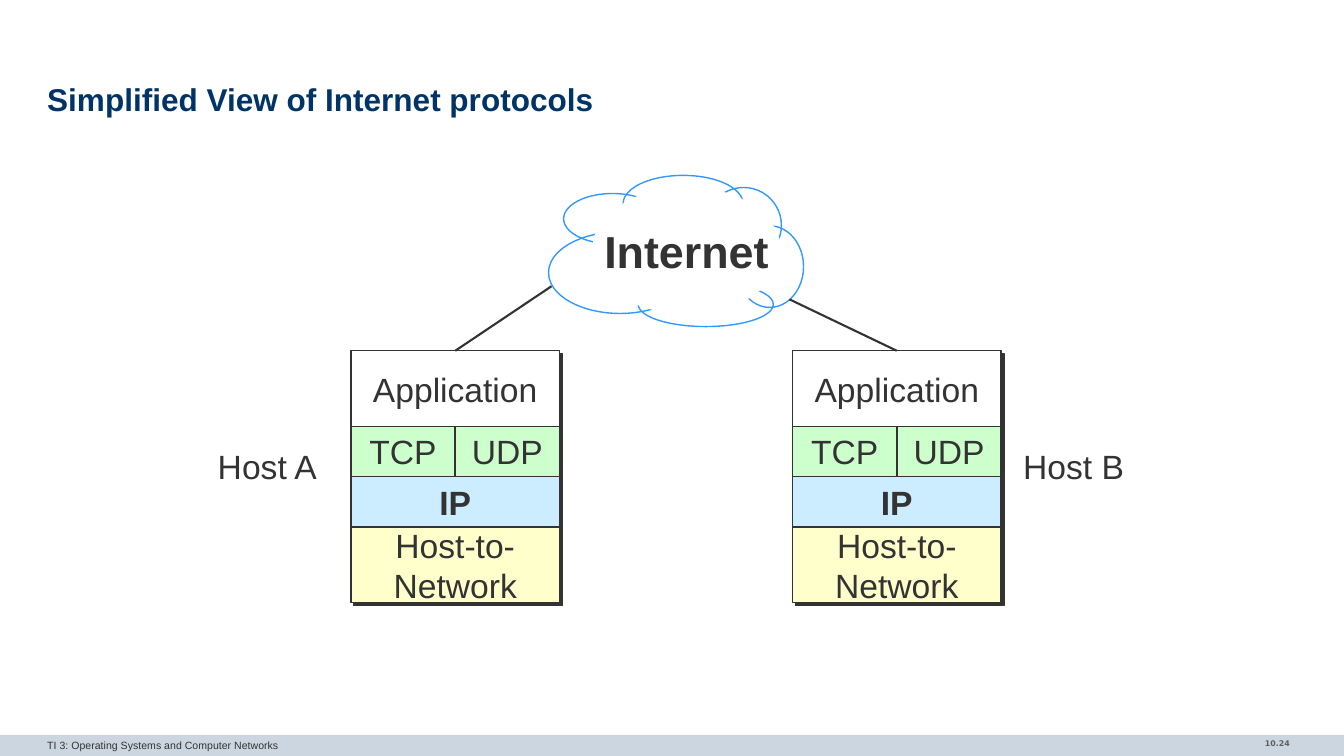
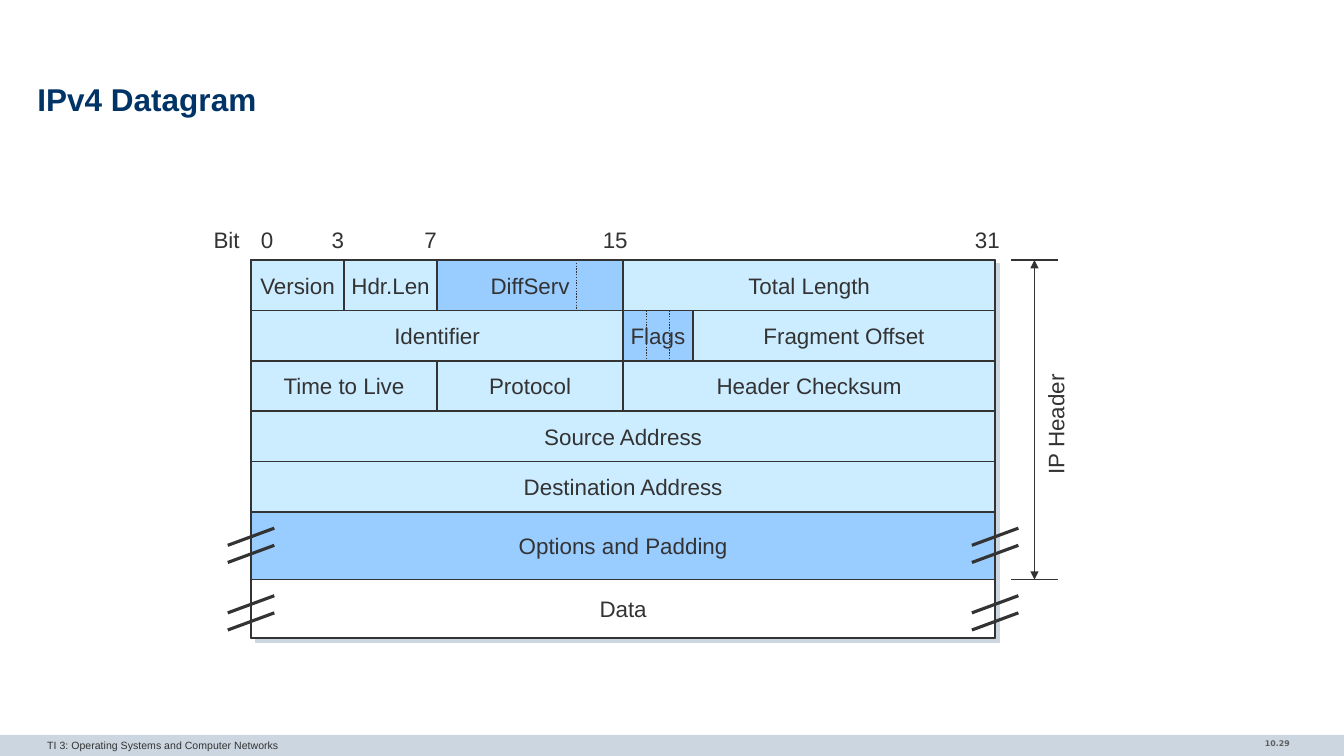
from dataclasses import dataclass
from typing import Optional

from lxml import etree
from pptx import Presentation
from pptx import util as u
from pptx.dml.color import RGBColor
from pptx.enum import dml, shapes, text
from pptx.oxml.ns import qn

COLORS = {
    "ink": "333333", "title": "003366", "band": "CCD6E0", "number": "5F5F5F",
    "white": "FFFFFF", "green": "CCFFCC", "pale": "CCECFF", "blue": "99CCFF",
    "yellow": "FFFFCC", "cloud": "3399FF",
}
LEFT, CENTER, RIGHT = text.PP_ALIGN.LEFT, text.PP_ALIGN.CENTER, text.PP_ALIGN.RIGHT
RECT, OVAL = shapes.MSO_SHAPE.RECTANGLE, shapes.MSO_SHAPE.OVAL
COURSE = "TI 3: Operating Systems and Computer Networks"


@dataclass(frozen=True)
class Box:
    left: float
    top: float
    width: float
    height: float

    def lengths(self) -> list:
        return [u.Inches(v) for v in (self.left, self.top, self.width, self.height)]


@dataclass(frozen=True)
class Style:
    size: float
    color: str = "ink"
    bold: bool = False
    font: str = "Arial"
    align: text.PP_ALIGN = LEFT


@dataclass(frozen=True)
class Layer:
    """One part of a host's protocol stack; left and width are shares of the stack."""
    name: str
    top: float
    height: float
    fill: str
    left: float = 0
    width: float = 1
    bold: bool = False


@dataclass(frozen=True)
class Field:
    name: str
    bits: int
    fill: Optional[str] = "pale"
    dividers: tuple = ()  # dotted lines, in bits from the field's left edge


@dataclass(frozen=True)
class Row:
    height: float
    fields: tuple
    broken: bool = False


LAYERS = (
    Layer("Application", 0, 0.75, "white"),
    Layer("TCP", 0.75, 0.5, "green", 0, 0.5),
    Layer("UDP", 0.75, 0.5, "green", 0.5, 0.5),
    Layer("IP", 1.25, 0.5, "pale", bold=True),
    Layer("Host-to-\nNetwork", 1.75, 0.75, "yellow"),
)
CLOUD_PUFFS = (
    Box(5.59, 1.92, 0.97, 0.5), Box(6.18, 1.74, 1.19, 0.56), Box(7, 1.86, 0.75, 0.75),
    Box(5.44, 2.3, 1.42, 0.81), Box(6.33, 2.8, 1.34, 0.44), Box(7.3, 2.24, 0.67, 0.81),
)
HEADER_ROWS = (
    Row(0.5, (Field("Version", 4), Field("Hdr.Len", 4),
              Field("DiffServ", 8, "blue", (6,)), Field("Total Length", 16))),
    Row(0.5, (Field("Identifier", 16), Field("Flags", 3, "blue", (1, 2)),
              Field("Fragment Offset", 13))),
    Row(0.5, (Field("Time to Live", 8), Field("Protocol", 8), Field("Header Checksum", 16))),
    Row(0.5, (Field("Source Address", 32),)),
    Row(0.5, (Field("Destination Address", 32),)),
    Row(0.67, (Field("Options and Padding", 32, "blue"),), broken=True),
)
DATA_ROW = Row(0.58, (Field("Data", 32, None),), broken=True)
BIT_LABELS = (("Bit", 2.02, 0.46), ("0", 2.49, 0.32), ("3", 3.19, 0.32),
              ("7", 4.11, 0.32), ("15", 5.88, 0.45), ("31", 9.57, 0.45))


def rgb(name: str) -> RGBColor:
    return RGBColor.from_string(COLORS[name])


def write(frame, words: str, style: Style):
    """Write one paragraph; a newline becomes a line break."""
    paragraph = frame.paragraphs[0]
    paragraph.alignment = style.align
    for index, line in enumerate(words.split("\n")):
        if index:
            paragraph.add_line_break()
        run = paragraph.add_run()
        run.text = line
        run.font.name, run.font.size = style.font, u.Pt(style.size)
        run.font.bold = style.bold
        run.font.color.rgb = rgb(style.color)
    return paragraph


def add_text(slide, box: Box, words: str, style: Style, wrap: bool = True):
    label = slide.shapes.add_textbox(*box.lengths())
    label.text_frame.word_wrap = wrap
    if not wrap:
        label.text_frame.auto_size = text.MSO_AUTO_SIZE.SHAPE_TO_FIT_TEXT
    write(label.text_frame, words, style)
    return label


def add_block(slide, box: Box, fill: Optional[str] = None, line: Optional[str] = "ink",
              words: str = "", style: Optional[Style] = None, kind=RECT):
    block = slide.shapes.add_shape(kind, *box.lengths())
    block.shadow.inherit = False
    if fill:
        block.fill.solid()
        block.fill.fore_color.rgb = rgb(fill)
    else:
        block.fill.background()
    if line:
        block.line.color.rgb = rgb(line)
        block.line.width = u.Pt(1)
    else:
        block.line.fill.background()
    if words:
        block.text_frame.word_wrap = False
        block.text_frame.vertical_anchor = text.MSO_ANCHOR.MIDDLE
        write(block.text_frame, words, style)
    return block


def cast_shadow(block, color: str, distance: float) -> None:
    """Hard shadow towards the lower right."""
    effects = block.element.spPr.find(qn("a:effectLst"))
    shadow = etree.SubElement(effects, qn("a:outerShdw"), blurRad="0",
                              dist=str(u.Pt(distance)), dir="2700000",
                              algn="ctr", rotWithShape="0")
    etree.SubElement(shadow, qn("a:srgbClr"), val=COLORS[color])


def add_line(slide, x1: float, y1: float, x2: float, y2: float, width: float = 1,
             dotted: bool = False, arrows: bool = False):
    line = slide.shapes.add_connector(shapes.MSO_CONNECTOR.STRAIGHT,
                                      *(u.Inches(v) for v in (x1, y1, x2, y2)))
    line.line.color.rgb = rgb("ink")
    line.line.width = u.Pt(width)
    if dotted:
        line.line.dash_style = dml.MSO_LINE.ROUND_DOT
    properties = line.element.spPr
    if arrows:
        for end in ("a:headEnd", "a:tailEnd"):
            etree.SubElement(properties.find(qn("a:ln")), qn(end), type="triangle")
    etree.SubElement(properties, qn("a:effectLst"))
    return line


def add_page(deck, title: str, number: str, inset: float):
    """Blank slide with the shared title, footer band, course name and number."""
    slide = deck.slides.add_slide(deck.slide_layouts[6])
    add_block(slide, Box(0, 7.29, 13.33, 0.21), "band", None)
    add_text(slide, Box(11.1, 7.28, 1.79, 0.23), number,
             Style(5.6, "number", True, "DejaVu Sans", RIGHT))
    add_text(slide, Box(0.37, 7.28, 8.72, 0.22), COURSE, Style(7.5))
    heading = slide.shapes.add_textbox(*Box(0.37, 0.78, 12.6, 0.47).lengths())
    frame = heading.text_frame
    frame.word_wrap = True
    frame.vertical_anchor = text.MSO_ANCHOR.MIDDLE
    frame.margin_left = frame.margin_right = u.Inches(inset)
    frame.margin_top = frame.margin_bottom = u.Inches(inset / 2)
    write(frame, title, Style(22.5, "title", True)).line_spacing = 0.85
    return slide


def add_host(slide, left: float):
    """Draw a protocol stack and return its application layer."""
    top, width = 3.48, 2.07
    parts = []
    for layer in LAYERS:
        box = Box(left + layer.left * width, top + layer.top, layer.width * width, layer.height)
        part = add_block(slide, box, layer.fill, "ink", layer.name,
                         Style(24, bold=layer.bold, align=CENTER))
        cast_shadow(part, "ink", 2.8)
        parts.append(part)
    return parts[0]


def build_protocols(deck) -> None:
    slide = add_page(deck, "Simplified View of Internet protocols", "10.24", 0.1)
    # Cloud: outlined puffs with their inner halves covered
    for puff in CLOUD_PUFFS:
        add_block(slide, puff, line="cloud", kind=OVAL)
    add_block(slide, Box(5.88, 1.86, 1.86, 1.25), "white", "white", "Internet",
              Style(32, bold=True, align=CENTER), OVAL)
    # Hosts, each joined to the cloud
    for left, cloud_x, cloud_y in ((3.48, 5.47, 2.84), (7.86, 7.83, 2.97)):
        application = add_host(slide, left)
        link = add_line(slide, left, 3.48, cloud_x, cloud_y, 1.5)
        link.begin_connect(application, 0)
    for name, left, align in (("Host A", 2.04, RIGHT), ("Host B", 10.05, LEFT)):
        add_text(slide, Box(left, 4.37, 1.2, 0.5), name, Style(24, align=align), wrap=False)


def build_datagram(deck) -> None:
    slide = add_page(deck, "IPv4 Datagram", "10.29", 0)
    left, top, width = 2.49, 2.58, 7.38
    bit = width / 32
    header_bottom = top + sum(row.height for row in HEADER_ROWS)
    frame = add_block(slide, Box(left, top, width, header_bottom + DATA_ROW.height - top), "white")
    cast_shadow(frame, "band", 4.2)

    # Fields, dotted dividers and break marks
    y = top
    for row in HEADER_ROWS + (DATA_ROW,):
        x = left
        for field in row.fields:
            add_block(slide, Box(x, y, field.bits * bit, row.height), field.fill, "ink",
                      field.name, Style(16, align=CENTER))
            for divider in field.dividers:
                divider_x = x + divider * bit
                add_line(slide, divider_x, y, divider_x, y + row.height, dotted=True)
            x += field.bits * bit
        if row.broken:
            for edge in (left, left + width):
                for drop in (0.5, 0.33):
                    add_line(slide, edge - bit, y + drop, edge + bit, y + drop - 0.17, 2.25)
        y += row.height

    # Bit scale
    for words, label_left, label_width in BIT_LABELS:
        add_text(slide, Box(label_left, 2.19, label_width, 0.37), words, Style(16), wrap=False)

    # Header extent
    extent_x = 10.26
    add_line(slide, extent_x, top, extent_x, header_bottom, arrows=True)
    for tick_y in (top, header_bottom):
        add_line(slide, extent_x - bit, tick_y, extent_x + bit, tick_y)
    extent = add_text(slide, Box(9.87, 4.02, 1.2, 0.37), "IP Header", Style(16), wrap=False)
    extent.rotation = 270


def main() -> None:
    deck = Presentation()
    deck.slide_width, deck.slide_height = u.Inches(13.33), u.Inches(7.5)
    build_protocols(deck)
    build_datagram(deck)
    deck.save("out.pptx")


if __name__ == "__main__":
    main()
